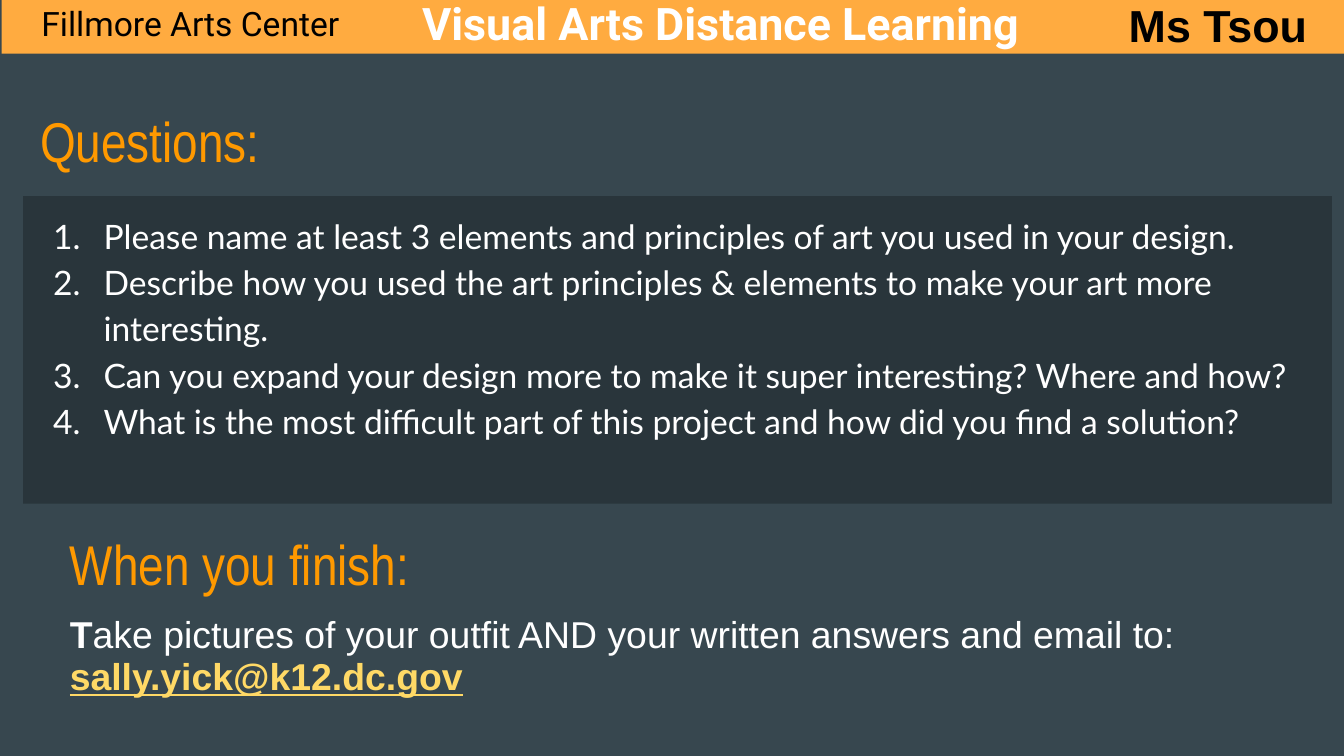
from lxml import etree
from pptx import Presentation
from pptx.dml.color import RGBColor
from pptx.enum import shapes, text
from pptx.oxml import ns
from pptx.util import Pt

COLORS = {
    "slate": "37474F",
    "panel": "29353B",
    "banner": "FFAB40",
    "heading": "FF9900",
    "email": "FFD966",
    "white": "FFFFFF",
    "black": "000000",
}

QUESTIONS = [
    "Please name at least 3 elements and principles of art you used in your design.",
    "Describe how you used the art principles & elements to make your art more interesting.",
    "Can you expand your design more to make it super interesting? Where and how?",
    "What is the most difficult part of this project and how did you find a solution?",
]


def rgb(name):
    return RGBColor.from_string(COLORS[name])


def add_run(paragraph, words, size=18, font="Arial", color="white", bold=False, underline=False):
    run = paragraph.add_run()
    run.text = words
    run.font.size = Pt(size)
    run.font.name = font
    run.font.color.rgb = rgb(color)
    run.font.bold = bold
    run.font.underline = underline


def set_frame(frame):
    frame.word_wrap = True
    frame.auto_size = text.MSO_AUTO_SIZE.NONE
    frame.vertical_anchor = text.MSO_ANCHOR.TOP
    frame.margin_left = frame.margin_right = Pt(7.2)
    frame.margin_top = frame.margin_bottom = Pt(7.2)


def add_text(slide, box, *runs, line_spacing=1.0):
    frame = slide.shapes.add_textbox(*map(Pt, box)).text_frame
    set_frame(frame)
    paragraph = frame.paragraphs[0]
    paragraph.line_spacing = line_spacing
    for words, style in runs:
        add_run(paragraph, words, **style)


def add_block(slide, box, color):
    block = slide.shapes.add_shape(shapes.MSO_SHAPE.RECTANGLE, *map(Pt, box))
    block.shadow.inherit = False
    block.fill.solid()
    block.fill.fore_color.rgb = rgb(color)
    block.line.fill.background()
    return block


def number_paragraph(paragraph):
    properties = paragraph._p.get_or_add_pPr()
    properties.set("marL", str(Pt(36)))
    properties.set("indent", str(-Pt(27)))
    bullet_color = etree.SubElement(properties, ns.qn("a:buClr"))
    etree.SubElement(bullet_color, ns.qn("a:srgbClr"), val=COLORS["white"])
    etree.SubElement(properties, ns.qn("a:buFont"), typeface="Lato")
    etree.SubElement(properties, ns.qn("a:buAutoNum"), type="arabicPeriod")


def add_questions(slide, box):
    frame = add_block(slide, box, "panel").text_frame
    set_frame(frame)
    for index, question in enumerate(QUESTIONS):
        paragraph = frame.add_paragraph() if index else frame.paragraphs[0]
        paragraph.alignment = text.PP_ALIGN.LEFT
        paragraph.line_spacing = 1.15
        number_paragraph(paragraph)
        add_run(paragraph, question, font="Lato")


def main():
    deck = Presentation()
    deck.slide_width, deck.slide_height = Pt(720), Pt(405)
    slide = deck.slides.add_slide(deck.slide_layouts[6])
    slide.background.fill.solid()
    slide.background.fill.fore_color.rgb = rgb("slate")

    heading = dict(size=30, font="Arial Narrow", color="heading")
    add_text(slide, (14.4, 49.7, 681, 49.7), ("Questions:", heading))
    add_questions(slide, (12.4, 105.1, 701.1, 164.7))

    add_text(
        slide, (30.3, 321.8, 671, 89.3),
        ("T", dict(size=20, bold=True)),
        ("ake pictures of your outfit AND your written answers and email to: ", dict(size=20)),
        ("sally.yick@k12.dc.gov", dict(size=20, color="email", bold=True, underline=True)),
        line_spacing=0.95,
    )
    add_text(slide, (30.3, 276.5, 671, 45.4), ("When you finish:", heading))

    add_block(slide, (0.9, -5, 719.1, 33.8), "banner")
    add_text(slide, (219, -9.4, 354.2, 33.8),
             ("Visual Arts Distance Learning", dict(size=24, font="Roboto", bold=True)))
    add_text(slide, (15.1, -5.8, 237.6, 28.8),
             ("Fillmore Arts Center", dict(font="Roboto", color="black")))
    add_text(slide, (597.6, -8.6, 123.1, 36),
             ("Ms Tsou", dict(size=24, color="black", bold=True)))

    deck.save("out.pptx")


if __name__ == "__main__":
    main()
